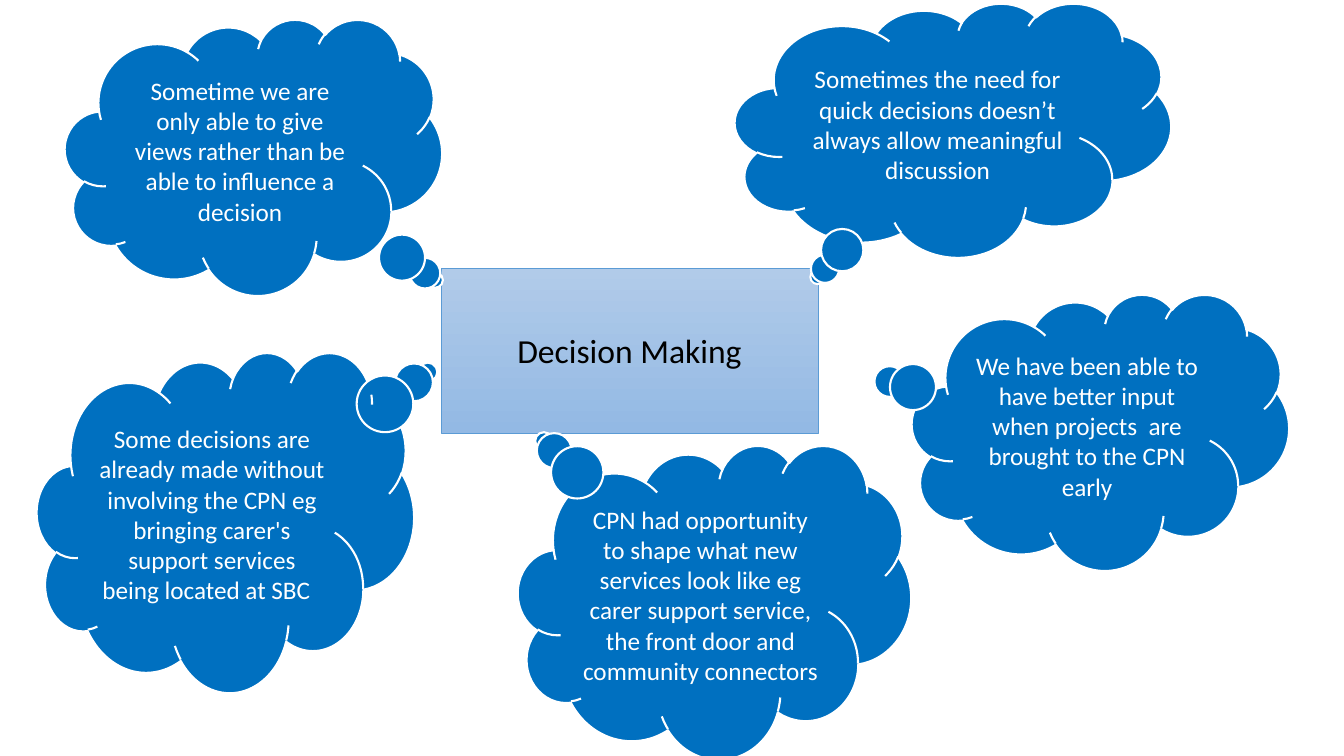
from pptx import Presentation
from pptx.dml.color import RGBColor
from pptx.enum.shapes import MSO_SHAPE
from pptx.enum.text import MSO_ANCHOR, PP_ALIGN
from pptx.util import Emu, Pt

PX = 914400 / 100.8
FONT = "Calibri"
CLOUD_BLUE = RGBColor(0x00, 0x70, 0xC0)
WHITE = RGBColor(0xFF, 0xFF, 0xFF)
BLACK = RGBColor(0x00, 0x00, 0x00)
TOPIC_TOP = RGBColor(0xB1, 0xCB, 0xE9)
TOPIC_BOTTOM = RGBColor(0x93, 0xB9, 0xE4)
TOPIC_EDGE = RGBColor(0x5B, 0x9B, 0xD5)

TOPIC_BOX = (441, 268, 377, 165)
THOUGHTS = [
    ((65, 19, 377, 276), (0.482, 0.446),
     "Sometime we are only able to give views rather than be able to "
     "influence a decision"),
    ((912, 294, 377, 276), (-0.581, -0.19),
     "We have been able to have better input when projects  are brought "
     "to the CPN early"),
    ((37, 352, 377, 340), (0.537, -0.441),
     "Some decisions are already made without involving the CPN eg "
     "bringing carer's support services being located at SBC  "),
    ((735, 3, 436, 254), (-0.311, 0.579),
     "Sometimes the need for quick decisions doesn’t always allow "
     "meaningful discussion"),
    ((518, 445, 393, 314), (-0.434, -0.513),
     "CPN had opportunity to shape what new services look like eg carer "
     "support service, the front door and community connectors"),
]


def px(n):
    """Convert pixels to EMU."""
    return Emu(round(n * PX))


def add_box(s, kind, box, text, size, color, edge, edge_width):
    """Add an outlined shape with centred text."""
    sp = s.shapes.add_shape(kind, *map(px, box))
    sp.shadow.inherit = False
    sp.line.color.rgb = edge
    sp.line.width = Pt(edge_width)
    tf = sp.text_frame
    tf.word_wrap = True
    tf.vertical_anchor = MSO_ANCHOR.MIDDLE
    p = tf.paragraphs[0]
    p.text = text
    p.alignment = PP_ALIGN.CENTER
    p.font.name = FONT
    p.font.size = Pt(size)
    p.font.color.rgb = color
    return sp


def add_topic(s, box, text):
    """Add the central topic with its vertical gradient."""
    sp = add_box(s, MSO_SHAPE.RECTANGLE, box, text, 24, BLACK, TOPIC_EDGE, 0.5)
    sp.fill.gradient()
    sp.fill.gradient_angle = 270
    for stop, color in zip(sp.fill.gradient_stops, (TOPIC_TOP, TOPIC_BOTTOM)):
        stop.color.rgb = color


def add_thought(s, box, tail, text):
    """Add a thought cloud whose tail is an offset from its centre."""
    sp = add_box(s, MSO_SHAPE.CLOUD_CALLOUT, box, text, 18, WHITE, WHITE, 1.5)
    sp.fill.solid()
    sp.fill.fore_color.rgb = CLOUD_BLUE
    for i, offset in enumerate(tail):
        sp.adjustments[i] = offset


def main():
    """Build the decision making slide."""
    prs = Presentation()
    prs.slide_width, prs.slide_height = px(1344), px(756)
    s = prs.slides.add_slide(prs.slide_layouts[6])
    add_topic(s, TOPIC_BOX, "Decision Making")
    for box, tail, text in THOUGHTS:
        add_thought(s, box, tail, text)
    prs.save("out.pptx")


if __name__ == "__main__":
    main()
